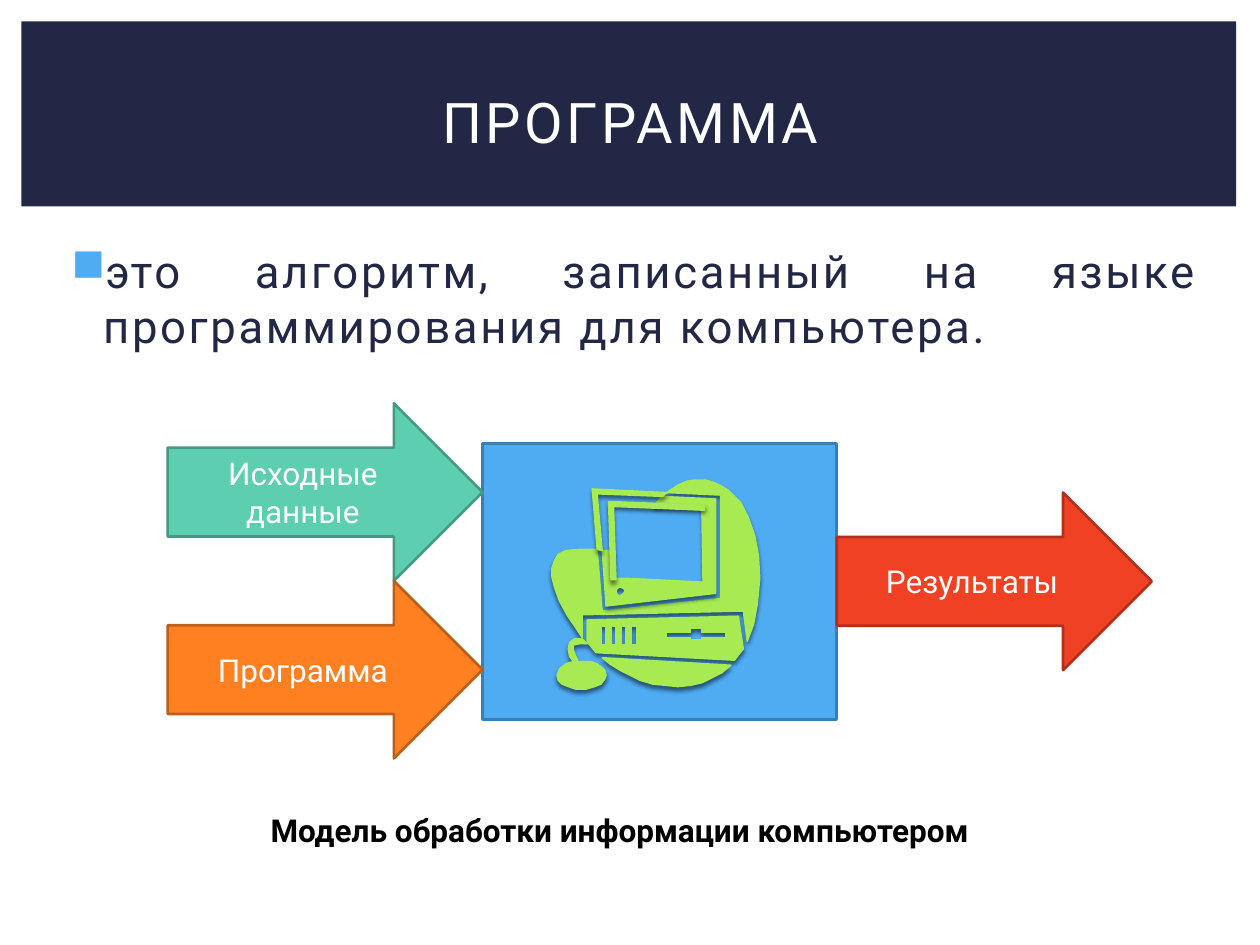
from lxml.etree import SubElement
from pptx import Presentation
from pptx.dml.color import RGBColor
from pptx.enum.shapes import MSO_SHAPE
from pptx.enum.text import MSO_ANCHOR, PP_ALIGN
from pptx.oxml import parse_xml
from pptx.oxml.ns import nsdecls, qn
from pptx.util import Cm, Pt

COLORS = {
    "navy": "212745", "white": "FFFFFF", "black": "000000",
    "blue": "4FACF3", "blue_edge": "3A7FB4",
    "teal": "5DCEAF", "teal_edge": "459881",
    "orange": "FF8021", "orange_edge": "BD5F18",
    "red": "F14124", "red_edge": "B2301B", "lime": "A7EA52",
}


def paint(s, fill, line=None, width=1.5):
    s.shadow.inherit = False
    s.fill.solid()
    s.fill.fore_color.rgb = RGBColor.from_string(COLORS[fill])
    if line:
        s.line.color.rgb = RGBColor.from_string(COLORS[line])
        s.line.width = Pt(width)
    else:
        s.line.fill.background()


def write(s, text, size, color, align=PP_ALIGN.CENTER, anchor=MSO_ANCHOR.MIDDLE, spacing=0):
    tf = s.text_frame
    tf.word_wrap = True
    tf.vertical_anchor = anchor
    p = tf.paragraphs[0]
    p.alignment = align
    p.font.name = "Roboto"
    p.font.size = Pt(size)
    p.font.color.rgb = RGBColor.from_string(COLORS[color])
    r = p.add_run()
    r.text = text
    if spacing:
        r._r.get_or_add_rPr().set("spc", str(spacing))
    return p


prs = Presentation()
prs.slide_width, prs.slide_height = Cm(25.4), Cm(19.05)
slide = prs.slides.add_slide(prs.slide_layouts[6])
shapes = slide.shapes

# Title band
s = shapes.add_shape(MSO_SHAPE.RECTANGLE, Cm(0.43), Cm(0.43), Cm(24.49), Cm(3.73))
paint(s, "navy")
s = shapes.add_textbox(Cm(1.07), Cm(0.99), Cm(23.29), Cm(2.92))
write(s, "ПРОГРАММА", 32, "white", spacing=200)

# Definition with a square bullet
s = shapes.add_textbox(Cm(1.07), Cm(4.78), Cm(23.34), Cm(12.24))
p = write(s, "это алгоритм, записанный на языке программирования для компьютера.",
          26, "navy", PP_ALIGN.JUSTIFY, MSO_ANCHOR.TOP, 150)
p.space_before = Pt(5)
pPr = p._p.get_or_add_pPr()
pPr.set("marL", str(Cm(0.76)))
pPr.set("indent", str(-Cm(0.64)))
bullet_color = parse_xml(f'<a:buClr {nsdecls("a")}><a:srgbClr val="{COLORS["blue"]}"/></a:buClr>')
bullet = parse_xml(f'<a:buChar {nsdecls("a")} char="■"/>')
pPr.find(qn("a:spcBef")).addnext(bullet_color)
bullet_color.addnext(bullet)

# Caption
s = shapes.add_textbox(Cm(3.96), Cm(16.23), Cm(17.07), Cm(1.02))
p = write(s, "Модель обработки информации компьютером", 18, "black", anchor=MSO_ANCHOR.TOP)
p.font.bold = True

# Computer box with input and output arrows
s = shapes.add_shape(MSO_SHAPE.RECTANGLE, Cm(9.73), Cm(8.94), Cm(7.14), Cm(5.56))
paint(s, "blue", "blue_edge")
for text, left, top, color in [
    ("Исходные данные", 3.38, 8.13, "teal"),
    ("Программа", 3.38, 11.71, "orange"),
    ("Результаты", 16.87, 9.93, "red"),
]:
    s = shapes.add_shape(MSO_SHAPE.RIGHT_ARROW, Cm(left), Cm(top), Cm(6.35), Cm(3.58))
    paint(s, color, color + "_edge")
    write(s, text, 18, "white")

# Computer drawing: each part is an outline followed by its holes, in units of 0.0254 cm
drive_slots = [[(x, 497), (x + 4, 497), (x + 4, 512), (x, 512)] for x in range(477, 502, 8)]
drive_slider = [(548, 499), (557, 499), (557, 502), (576, 502), (576, 506), (557, 506),
                (557, 508), (548, 508), (548, 506), (529, 506), (529, 502), (548, 502)]
power_button = [(492, 466), (495, 467), (496, 469), (495, 471), (492, 473),
                (490, 472), (489, 469), (490, 467)]
computer_parts = [
    # Backdrop blob
    [[(588, 399), (583, 394), (578, 389), (573, 386), (567, 383), (560, 381), (551, 381),
      (545, 382), (538, 385), (529, 391), (572, 393), (572, 475), (478, 485), (474, 436),
      (460, 436), (449, 437), (443, 440), (440, 445), (438, 451), (438, 458), (440, 466),
      (444, 477), (450, 488), (456, 497), (462, 506), (462, 488), (590, 485), (593, 509),
      (598, 496), (601, 480), (603, 459), (602, 441), (599, 425), (594, 411)]],
    # Monitor front
    [[(498, 459), (558, 462), (557, 401), (519, 402), (521, 399), (525, 394), (568, 396),
      (568, 471), (481, 481), (478, 437), (487, 437), (487, 459)], power_button],
    # System unit
    [[(549, 490), (466, 492), (466, 510), (469, 513), (473, 518), (583, 524), (586, 520),
      (590, 515), (586, 489)], drive_slider] + drive_slots,
    # Blob under the system unit
    [[(492, 532), (500, 536), (508, 540), (518, 543), (528, 544), (538, 545), (548, 544),
      (557, 542), (565, 538), (573, 534), (580, 528), (478, 522), (484, 527)]],
    # Monitor side edge
    [[(474, 392), (526, 394), (528, 392), (530, 391), (470, 388), (474, 436), (478, 437)]],
    # Mouse with its cord
    [[(478, 530), (474, 527), (469, 525), (459, 525), (457, 521), (455, 516), (455, 512),
      (460, 511), (466, 511), (462, 507), (456, 507), (452, 510), (451, 515), (452, 521),
      (455, 525), (449, 527), (444, 531), (442, 536), (443, 540), (446, 543), (451, 545),
      (457, 547), (465, 547), (472, 545), (477, 543), (480, 539), (481, 536), (480, 532)]],
    # Screen bezel
    [[(559, 401), (483, 398), (485, 460), (489, 460), (487, 402), (559, 405)]],
]
for contours in computer_parts:
    builder = shapes.build_freeform(*contours[0][0], scale=Cm(0.0254))
    builder.add_line_segments(contours[0][1:], close=True)
    for hole in contours[1:]:
        builder.move_to(*hole[0])
        builder.add_line_segments(hole[1:], close=True)
    s = builder.convert_to_shape()
    paint(s, "lime", "lime", 0.79)
    shadow = SubElement(s._element.spPr.find(qn("a:effectLst")), qn("a:outerShdw"),
                        blurRad=str(Pt(2.5)), dist=str(Pt(2)), dir="5400000", rotWithShape="0")
    shadow_color = SubElement(shadow, qn("a:srgbClr"), val=COLORS["black"])
    SubElement(shadow_color, qn("a:alpha"), val="50000")

prs.save("out.pptx")
